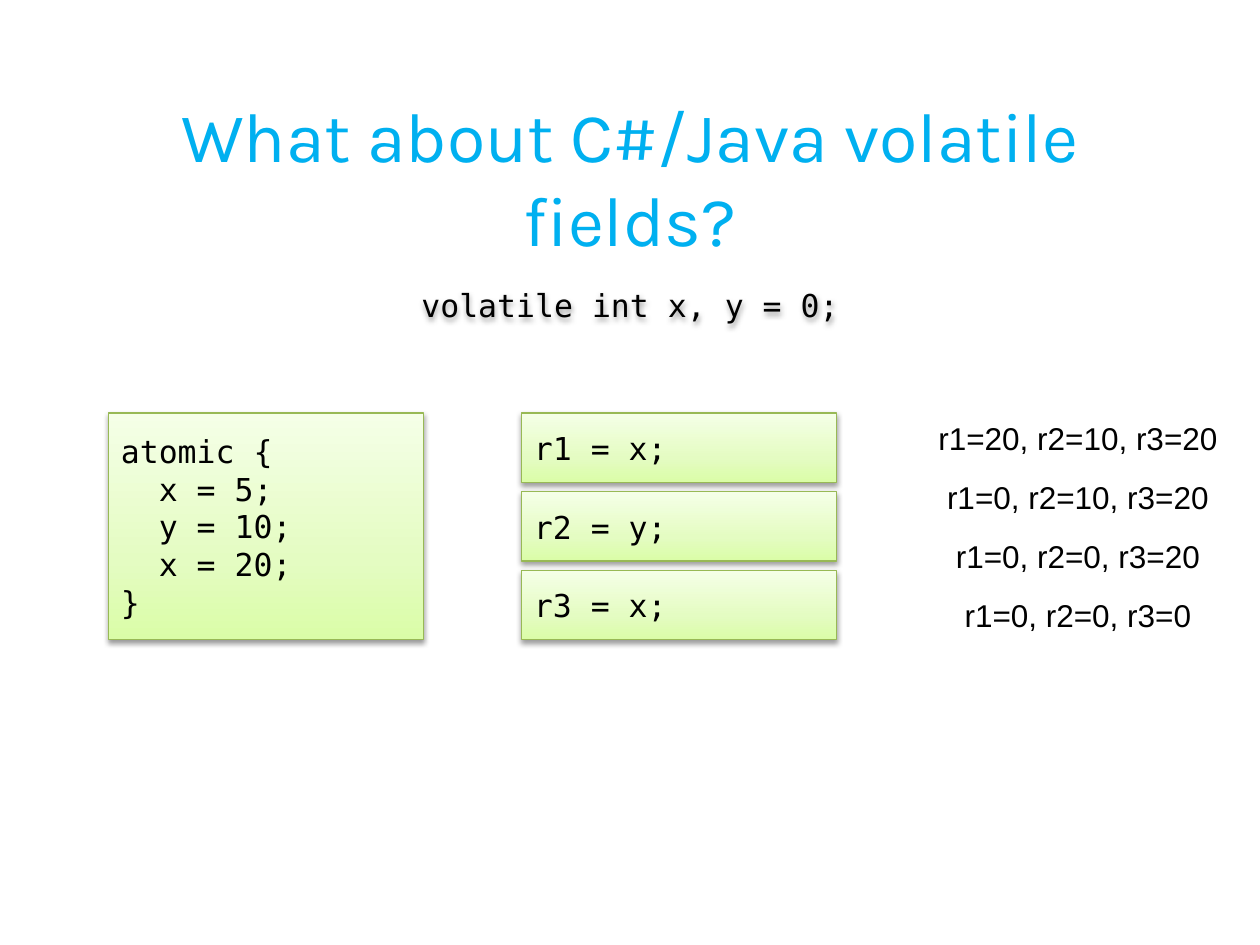
import lxml.etree
import pptx
import pptx.util
import pptx.dml.color
import pptx.enum.shapes
import pptx.enum.text
import pptx.oxml

Pt = pptx.util.Pt
Rgb = pptx.dml.color.RGBColor.from_string
Align = pptx.enum.text.PP_ALIGN
Anchor = pptx.enum.text.MSO_ANCHOR
NS = 'xmlns:a="http://schemas.openxmlformats.org/drawingml/2006/main"'

theme = {
    "title": ("Karla", 40, "00B0F0"),
    "code": ("DejaVu Sans Mono", 18, "000000"),
    "result": ("Arial", 18, "000000"),
    "edge": "98B955",
    "shade": "000000",
    "stops": ((0, "DAFDA7"), (35, "E4FCC2"), (100, "F5FFE7")),
}


def write(shape, lines, style, align, anchor):
    frame = shape.text_frame
    frame.word_wrap = True
    frame.vertical_anchor = anchor
    name, size, color = theme[style]
    for i, line in enumerate(lines):
        para = frame.add_paragraph() if i else frame.paragraphs[0]
        para.alignment = align
        run = para.add_run()
        run.text = line
        run.font.name = name
        run.font.size = Pt(size)
        run.font.color.rgb = Rgb(color)


def shade(shape):
    shape.shadow.inherit = False
    effect = shape.element.spPr.find(pptx.oxml.ns.qn("a:effectLst"))
    effect.append(pptx.oxml.parse_xml(
        f'<a:outerShdw {NS} blurRad="{Pt(3.1)}" dist="{Pt(1.6)}" dir="5400000" rotWithShape="0">'
        f'<a:srgbClr val="{theme["shade"]}"><a:alpha val="38000"/></a:srgbClr></a:outerShdw>'))


deck = pptx.Presentation()
deck.slide_width = Pt(720)
deck.slide_height = Pt(540)
slide = deck.slides.add_slide(deck.slide_layouts[6])
shapes = slide.shapes

title = shapes.add_textbox(Pt(36), Pt(56), Pt(648), Pt(90))
write(title, ["What about C#/Java volatile fields?"], "title", Align.CENTER, Anchor.MIDDLE)

fields = shapes.add_textbox(Pt(0), Pt(146), Pt(720), Pt(56))
write(fields, ["volatile int x, y = 0;"], "code", Align.CENTER, Anchor.MIDDLE)
shade(fields)

top = 236
blocks = [(62, top, 129.6, ["atomic {", "  x = 5;", "  y = 10;", "  x = 20;", "}"])]
for i, read in enumerate(["r1 = x;", "r2 = y;", "r3 = x;"]):
    blocks.append((298, top + 45 * i, 39.6, [read]))

stops = "".join(f'<a:gs pos="{pos * 1000}"><a:srgbClr val="{color}"/></a:gs>'
                for pos, color in theme["stops"])
for left, y, height, lines in blocks:
    box = shapes.add_shape(pptx.enum.shapes.MSO_SHAPE.RECTANGLE, Pt(left), Pt(y), Pt(180), Pt(height))
    box.line.color.rgb = Rgb(theme["edge"])
    box.line.width = Pt(0.75)
    box.element.spPr.find(pptx.oxml.ns.qn("a:ln")).addprevious(pptx.oxml.parse_xml(
        f'<a:gradFill {NS} rotWithShape="1"><a:gsLst>{stops}</a:gsLst>'
        '<a:lin ang="16200000" scaled="0"/></a:gradFill>'))
    shade(box)
    write(box, lines, "code", Align.LEFT, Anchor.MIDDLE)

results = ["r1=20, r2=10, r3=20", "r1=0, r2=10, r3=20", "r1=0, r2=0, r3=20", "r1=0, r2=0, r3=0"]
for i, result in enumerate(results):
    label = shapes.add_textbox(Pt(512), Pt(top + 33.75 * i), Pt(208), Pt(29))
    write(label, [result], "result", Align.CENTER, Anchor.TOP)
    label.text_frame.auto_size = pptx.enum.text.MSO_AUTO_SIZE.SHAPE_TO_FIT_TEXT

deck.save("out.pptx")
